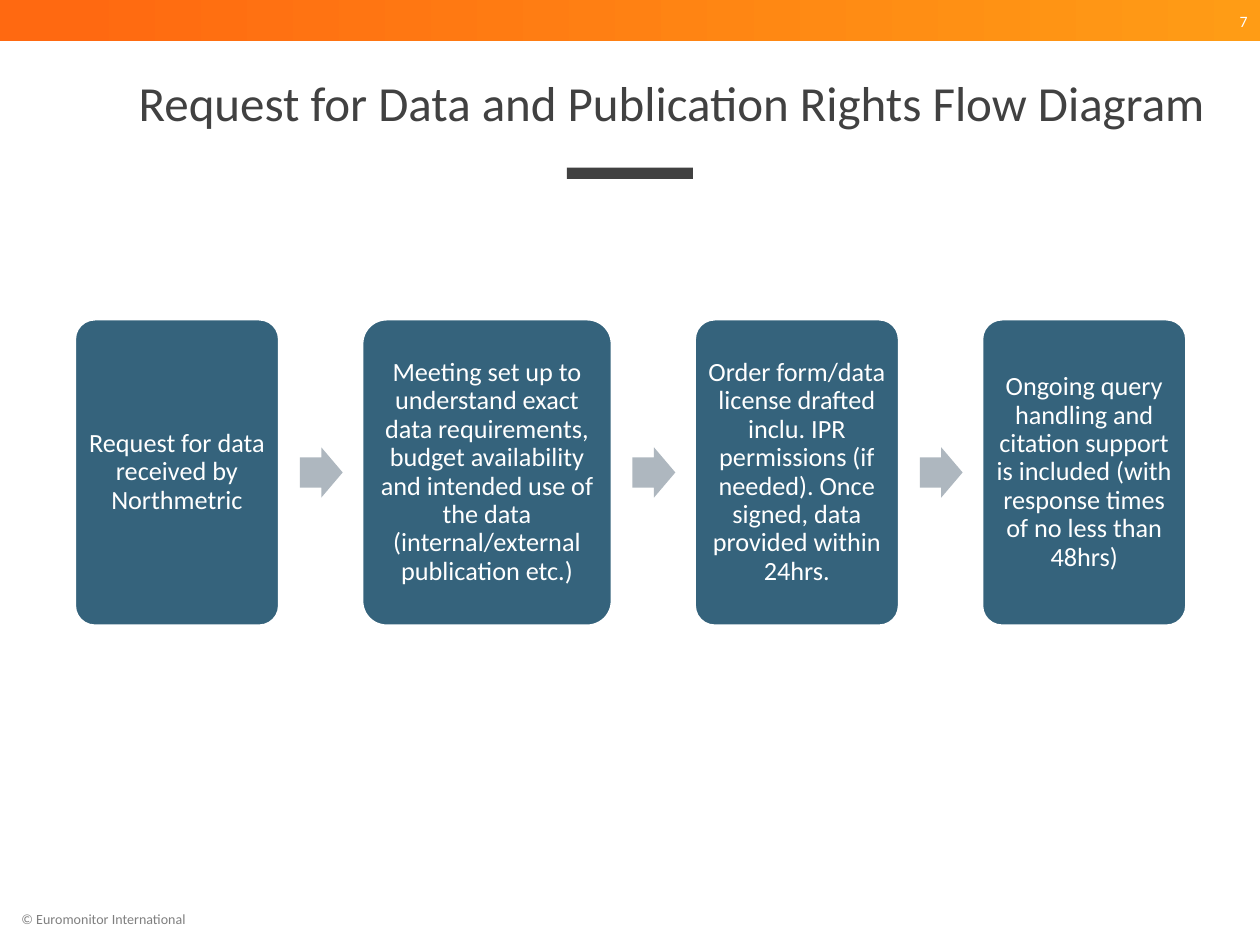
from dataclasses import dataclass

from pptx import Presentation
from pptx.dml.color import RGBColor
from pptx.enum.shapes import MSO_SHAPE
from pptx.enum.text import MSO_ANCHOR, MSO_AUTO_SIZE, PP_ALIGN
from pptx.util import Pt

PX = 9144


@dataclass(frozen=True)
class Theme:
    font: str = "Calibri"
    dark: str = "414141"
    grey: str = "7F7F7F"
    white: str = "FFFFFF"
    step: str = "35637C"
    arrow: str = "AEB7BF"
    band: tuple = ((0.05, "FF6911"), (1, "FF9C15"))
    title_size: int = 28
    step_size: int = 15
    number_size: int = 9
    footer_size: int = 8


class Deck:
    """Draws styled elements on the current slide, in hundredths of an inch."""

    def __init__(self, prs, theme):
        self.theme = theme
        self.s = prs.slides.add_slide(prs.slide_layouts[5])

    def set_text(self, sp, text, size, color, align=PP_ALIGN.CENTER, inset=0, spacing=None):
        tf = sp.text_frame
        tf.word_wrap = True
        tf.auto_size = MSO_AUTO_SIZE.NONE
        tf.vertical_anchor = MSO_ANCHOR.MIDDLE
        tf.margin_left = tf.margin_right = tf.margin_top = tf.margin_bottom = inset * PX
        p = tf.paragraphs[0]
        p.text = text
        p.alignment = align
        p.line_spacing = spacing
        p.font.name = self.theme.font
        p.font.size = Pt(size)
        p.font.color.rgb = RGBColor.from_string(color)

    def title(self, box, text):
        sp = self.s.shapes.title
        sp.left, sp.top, sp.width, sp.height = (v * PX for v in box)
        self.set_text(sp, text, self.theme.title_size, self.theme.dark, spacing=Pt(24.6))

    def text(self, box, text, size, color, align, inset=0):
        sp = self.s.shapes.add_textbox(*(v * PX for v in box))
        self.set_text(sp, text, size, color, align, inset)

    def shape(self, kind, box, color=None, adjust=()):
        sp = self.s.shapes.add_shape(kind, *(v * PX for v in box))
        sp.shadow.inherit = False
        sp.line.fill.background()
        if color:
            sp.fill.solid()
            sp.fill.fore_color.rgb = RGBColor.from_string(color)
        for i, value in enumerate(adjust):
            sp.adjustments[i] = value
        return sp

    def band(self, box):
        sp = self.shape(MSO_SHAPE.RECTANGLE, box)
        sp.fill.gradient()
        sp.fill.gradient_angle = 0
        for stop, (position, color) in zip(sp.fill.gradient_stops, self.theme.band):
            stop.position = position
            stop.color.rgb = RGBColor.from_string(color)

    def step(self, box, text):
        sp = self.shape(MSO_SHAPE.ROUNDED_RECTANGLE, box, self.theme.step, [0.1])
        sp.line.color.rgb = RGBColor.from_string(self.theme.white)
        sp.line.width = Pt(2)
        self.set_text(sp, text, self.theme.step_size, self.theme.white, inset=6, spacing=0.9)

    def arrow(self, box):
        self.shape(MSO_SHAPE.RIGHT_ARROW, box, self.theme.arrow, [0.6, 0.5])

    def flow(self, left, top, height, gap, steps):
        for i, (width, text) in enumerate(steps):
            if i:
                self.arrow((left - gap + 16, top + (height - 40) // 2, 34, 40))
            self.step((left, top, width, height), text)
            left += width + gap


STEPS = [
    (163, "Request for data received by Northmetric"),
    (199, "Meeting set up to understand exact data requirements, budget availability "
          "and intended use of the data (internal/external publication etc.)"),
    (163, "Order form/data license drafted inclu. IPR permissions (if needed). "
          "Once signed, data provided within 24hrs."),
    (163, "Ongoing query handling and citation support is included "
          "(with response times of no less than 48hrs)"),
]


def main():
    prs = Presentation()
    prs.slide_width, prs.slide_height = 1000 * PX, 750 * PX
    theme = Theme()
    deck = Deck(prs, theme)
    deck.text((17, 721, 310, 17), "© Euromonitor International",
              theme.footer_size, theme.grey, PP_ALIGN.LEFT)
    deck.band((0, 0, 1000, 33))
    deck.shape(MSO_SHAPE.RECTANGLE, (450, 133, 100, 9), theme.dark)
    deck.text((930, 0, 70, 33), "7", theme.number_size, theme.white, PP_ALIGN.RIGHT, 10)
    deck.title((92, 54, 882, 67), "Request for Data and Publication Rights Flow Diagram")
    deck.flow(59, 253, 244, 65, STEPS)
    prs.save("out.pptx")


if __name__ == "__main__":
    main()
